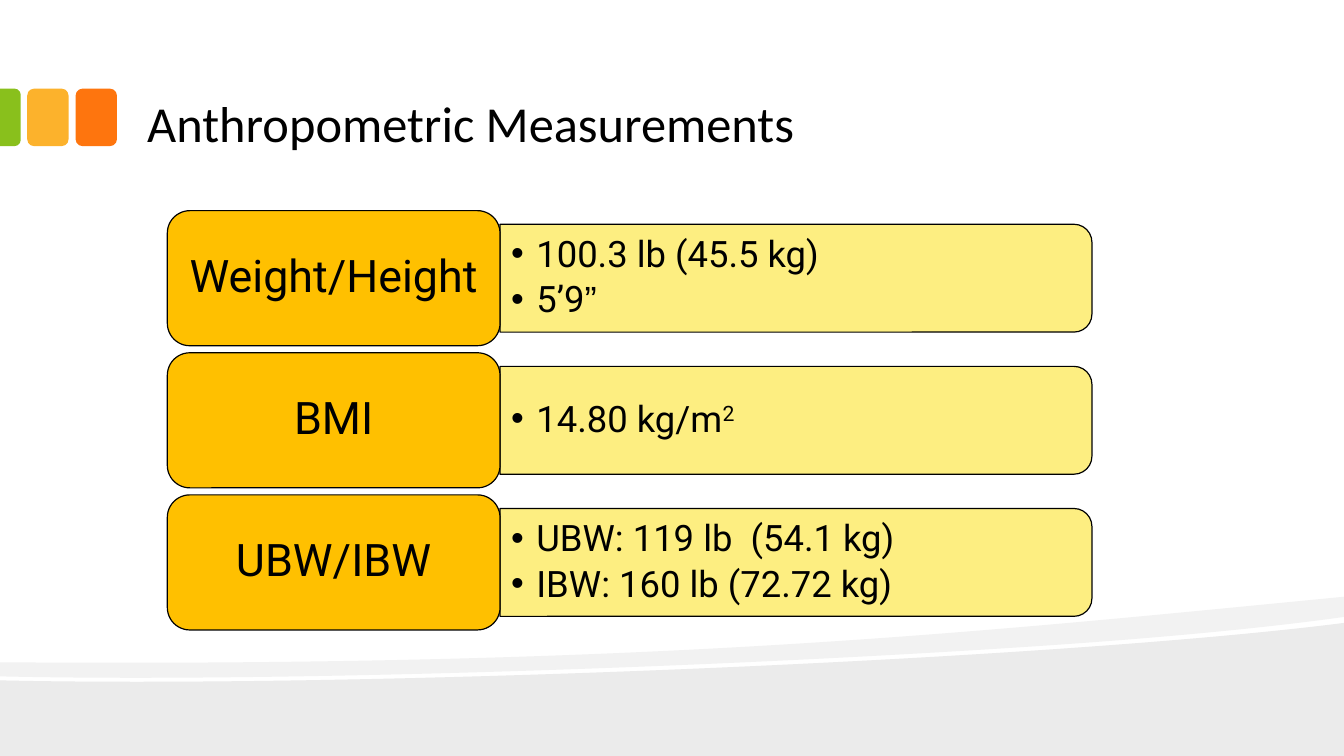
from dataclasses import dataclass

from lxml import etree
from pptx import Presentation
from pptx.dml.color import RGBColor
from pptx.enum.shapes import MSO_SHAPE
from pptx.enum.text import MSO_ANCHOR, MSO_AUTO_SIZE, PP_ALIGN
from pptx.oxml.ns import qn
from pptx.util import Inches, Pt

ROUND, TAB = MSO_SHAPE.ROUNDED_RECTANGLE, MSO_SHAPE.ROUND_2_SAME_RECTANGLE
MIDDLE, BOTTOM = MSO_ANCHOR.MIDDLE, MSO_ANCHOR.BOTTOM
LEFT, CENTER = PP_ALIGN.LEFT, PP_ALIGN.CENTER
NO_FIT = MSO_AUTO_SIZE.NONE


@dataclass(frozen=True)
class Theme:
    text: str = "000000"
    label: str = "FFC000"
    panel: str = "FDEE81"
    green: str = "89C01C"
    amber: str = "FCB22C"
    orange: str = "FE750E"
    wave: str = "EBEBEB"
    ribbon: str = "F2F2F2"
    title_font: str = "Calibri"
    body_font: str = "Roboto"
    quote_font: str = "Arial"
    title_size: float = 36
    label_size: float = 32
    body_size: float = 26
    outline: float = 0.85


THEME = Theme()
TITLE = "Anthropometric Measurements"
MEASUREMENTS = [
    ("Weight/Height", [[("100.3 lb (45.5 kg)", "")], [("5’9", ""), ("”", "quote")]]),
    ("BMI", [[("14.80 kg/m", ""), ("2", "super")]]),
    ("UBW/IBW", [[("UBW: 119 lb  (54.1 kg)", "")], [("IBW: 160 lb (72.72 kg)", "")]]),
]
SLIDE_W, SLIDE_H = 13.33, 7.5
CARD_X, CARD_Y, CARD_W, CARD_H, CARD_PITCH = 1.66, 2.09, 3.3, 1.34, 1.41
PANEL_W, PANEL_H, PANEL_TEXT_W = 5.87, 1.07, 5.81
SQUARE_Y, SQUARE_W, SQUARE_H = 0.88, 0.41, 0.57
SQUARES = [(0.75, THEME.orange), (0.27, THEME.amber)]
WAVE = [
    [(SLIDE_W, 6.18)],
    [(SLIDE_W, SLIDE_H)],
    [(0, SLIDE_H)],
    [(0, 6.75)],
    [(3.52, 6.83), (10.42, 6.55), (SLIDE_W, 6.18)],
]
RIBBON = [
    [(SLIDE_W, 5.92)],
    [(SLIDE_W, 6.12)],
    [(12.55, 6.23), (11.49, 6.33), (10.29, 6.41)],
    [(6.98, 6.63), (2.58, 6.77), (0, 6.71)],
    [(0, 6.57)],
    [(6.52, 6.62), (9.71, 6.27), (SLIDE_W, 5.92)],
]


def paint(sp, color, outlined=False):
    """Give a shape a flat fill and an optional thin outline."""
    sp.shadow.inherit = False
    sp.fill.solid()
    sp.fill.fore_color.rgb = RGBColor.from_string(color)
    if outlined:
        sp.line.color.rgb = RGBColor.from_string(THEME.text)
        sp.line.width = Pt(THEME.outline)
    else:
        sp.line.fill.background()


def add_area(s, steps, color):
    """Add a filled outline whose three-point steps are cubic curves."""
    points = [(Inches(x), Inches(y)) for step in steps for x, y in step]
    builder = s.shapes.build_freeform(*points[0])
    builder.add_line_segments(points[1:], close=True)
    sp = builder.convert_to_shape()
    lines = iter(list(sp._element.iter(qn("a:lnTo"))))
    for step in steps[1:]:
        first, *others = [next(lines) for _ in step]
        if others:
            first.tag = qn("a:cubicBezTo")
        for line in others:
            first.append(line[0])
            line.getparent().remove(line)
    paint(sp, color)


def add_block(s, kind, x, y, w, h, color, outlined=False):
    """Add a preset shape."""
    sp = s.shapes.add_shape(kind, Inches(x), Inches(y), Inches(w), Inches(h))
    paint(sp, color, outlined)
    return sp


def add_tab(s, x, y, w, h, color, outlined=False):
    """Add a block whose right corners alone are rounded."""
    sp = add_block(s, TAB, x + (w - h) / 2, y + (h - w) / 2, h, w, color, outlined)
    sp.rotation = 90
    return sp


def frame(sp, anchor, inset_x, inset_y):
    """Prepare a shape's text frame."""
    tf = sp.text_frame
    tf.word_wrap, tf.auto_size, tf.vertical_anchor = True, NO_FIT, anchor
    tf.margin_left = tf.margin_right = Inches(inset_x)
    tf.margin_top = tf.margin_bottom = Inches(inset_y)
    return tf


def add_run(p, text, size, font):
    """Append a styled run."""
    r = p.add_run()
    r.text = text
    r.font.size, r.font.name = Pt(size), font
    r.font.color.rgb = RGBColor.from_string(THEME.text)
    return r


def add_bullets(tf, items):
    """Write bulleted paragraphs run by run."""
    for i, runs in enumerate(items):
        p = tf.add_paragraph() if i else tf.paragraphs[0]
        p.alignment, p.line_spacing, p.space_after = LEFT, 0.9, Pt(4.5)
        pPr = p._p.get_or_add_pPr()
        pPr.set("marL", str(Inches(0.25)))
        pPr.set("indent", str(-Inches(0.25)))
        etree.SubElement(pPr, qn("a:buFont")).set("typeface", THEME.quote_font)
        etree.SubElement(pPr, qn("a:buChar")).set("char", "•")
        for text, style in runs:
            font = THEME.quote_font if style == "quote" else THEME.body_font
            r = add_run(p, text, THEME.body_size, font)
            if style == "super":
                r.font._element.set("baseline", "30000")


def add_measurement(s, y, label, items):
    """Add one label card with its panel of values."""
    right, middle = CARD_X + CARD_W, y + CARD_H / 2
    panel_y = middle - PANEL_H / 2
    add_tab(s, right, panel_y, PANEL_W, PANEL_H, THEME.panel, True)
    box = s.shapes.add_textbox(Inches(right), Inches(panel_y),
                               Inches(PANEL_TEXT_W), Inches(PANEL_H))
    add_bullets(frame(box, MIDDLE, 0.11, 0.05), items)
    card = add_block(s, ROUND, CARD_X, y, CARD_W, CARD_H, THEME.label, True)
    p = frame(card, MIDDLE, 0.13, 0.07).paragraphs[0]
    p.alignment, p.line_spacing = CENTER, 0.9
    add_run(p, label, THEME.label_size, THEME.body_font)


def main():
    """Build the slide and save it."""
    prs = Presentation()
    prs.slide_width, prs.slide_height = Inches(SLIDE_W), Inches(SLIDE_H)
    s = prs.slides.add_slide(prs.slide_layouts[5])

    add_area(s, WAVE, THEME.wave)
    add_area(s, RIBBON, THEME.ribbon)
    for x, color in SQUARES:
        add_block(s, ROUND, x, SQUARE_Y, SQUARE_W, SQUARE_H, color)
    green = add_tab(s, 0, SQUARE_Y, SQUARE_W / 2, SQUARE_H, THEME.green)
    green.adjustments[0] = 0.29

    title = s.shapes.title
    title.left, title.top = Inches(1.33), Inches(0.16)
    title.width, title.height = Inches(10.66), Inches(1.42)
    p = frame(title, BOTTOM, 0.13, 0.07).paragraphs[0]
    p.alignment = LEFT
    add_run(p, TITLE, THEME.title_size, THEME.title_font)

    for i, (label, items) in enumerate(MEASUREMENTS):
        add_measurement(s, CARD_Y + i * CARD_PITCH, label, items)
    prs.save("out.pptx")


if __name__ == "__main__":
    main()
